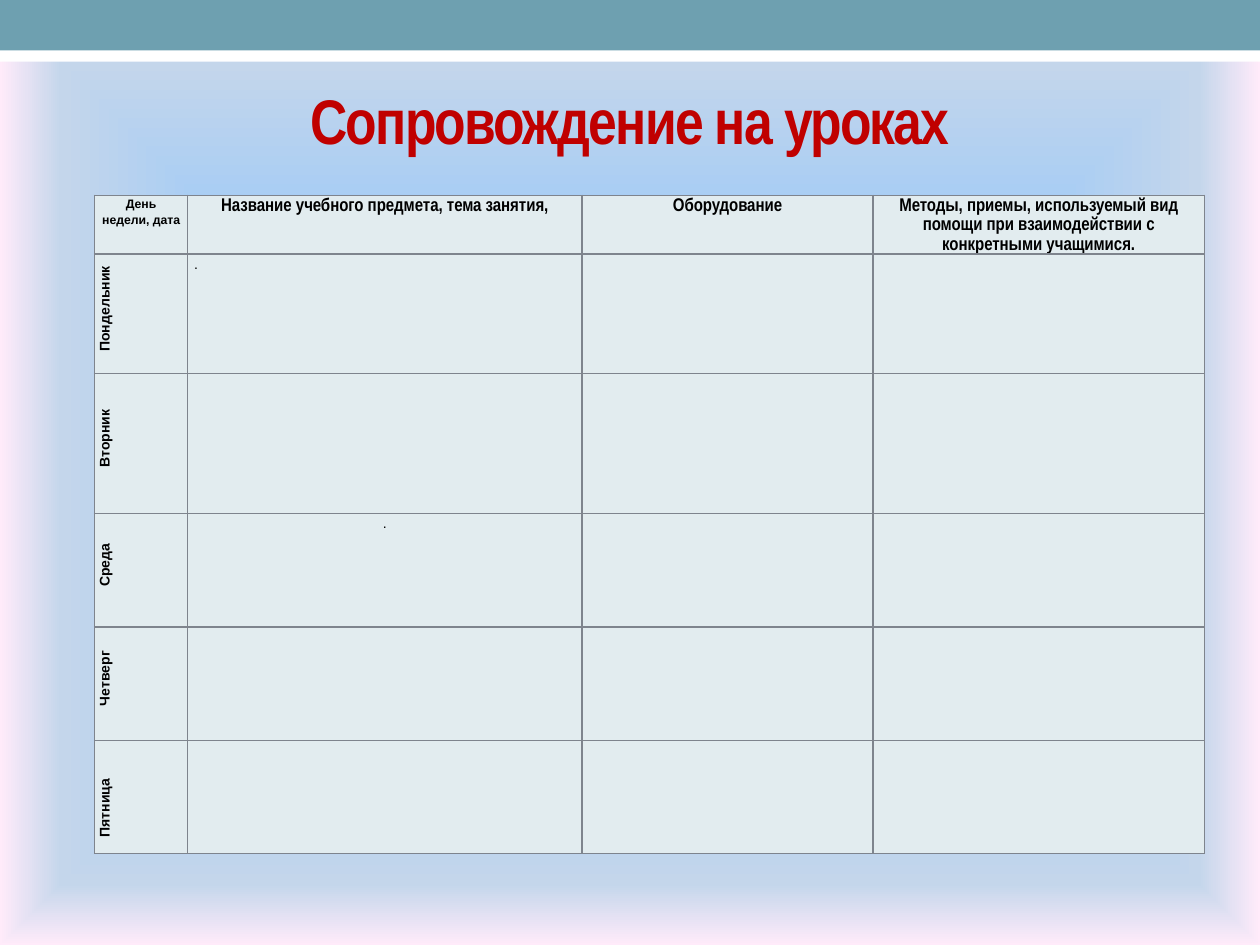
import pptx
import pptx.dml.color
import pptx.enum.shapes
import pptx.enum.text
import pptx.oxml
import pptx.oxml.ns
import pptx.util
from pptx.util import Inches

ALIGN = pptx.enum.text.PP_ALIGN
NS = pptx.oxml.ns.nsdecls("a", "p")
BACKGROUND_STOPS = [(0, "5E9EFF"), (23, "85C2FF"), (87, "C4D6EB"), (100, "FFEBFA")]
HEADERS = [
    "День недели, дата",
    "Название учебного предмета, тема занятия,",
    "Оборудование",
    "Методы, приемы, используемый вид помощи при взаимодействии с конкретными учащимися.",
]
DAYS = ["Пондельник", "Вторник", "Среда", "Четверг", "Пятница"]
COLUMN_WIDTHS = [0.74, 3.13, 2.31, 2.63]
ROW_HEIGHTS = [0.42, 0.95, 1.11, 0.9, 0.9, 0.9]


def color(hex_string):
    return pptx.dml.color.RGBColor.from_string(hex_string)


def write(frame, text, size=8, font="Arial", hue="000000", bold=True,
          align=ALIGN.CENTER, line_spacing=1.15, indent=0, tracking=0):
    paragraph = frame.paragraphs[0]
    paragraph.alignment = align
    paragraph.line_spacing = line_spacing
    if indent:
        paragraph._p.get_or_add_pPr().set("marL", str(Inches(indent)))
    run = paragraph.add_run()
    run.text = text
    run.font.size = pptx.util.Pt(size)
    run.font.name = font
    run.font.bold = bold
    run.font.color.rgb = color(hue)
    if tracking:
        run.font._element.set("spc", str(tracking * 100))


def add_background(slide):
    """Fill the slide with a gradient that spreads from its centre."""
    stops = "".join(
        f'<a:gs pos="{position * 1000}"><a:srgbClr val="{hue}"/></a:gs>'
        for position, hue in BACKGROUND_STOPS
    )
    background = pptx.oxml.parse_xml(
        f'<p:bg {NS}><p:bgPr><a:gradFill><a:gsLst>{stops}</a:gsLst>'
        '<a:path path="shape"><a:fillToRect l="50000" t="50000" r="50000" b="50000"/>'
        '</a:path></a:gradFill><a:effectLst/></p:bgPr></p:bg>'
    )
    slide.shapes._spTree.getparent().insert(0, background)


def add_top_band(slide, left, top, width, height):
    """Draw a teal band with a white strip showing below it."""
    for offset, depth, hue in [(0.24, height - 0.24, "FFFFFF"), (0, 0.4, "6EA0B0")]:
        band = slide.shapes.add_shape(
            pptx.enum.shapes.MSO_SHAPE.RECTANGLE,
            Inches(left), Inches(top + offset), Inches(width), Inches(depth))
        band.shadow.inherit = False
        band.fill.solid()
        band.fill.fore_color.rgb = color(hue)
        band.line.fill.background()


def add_title(slide, left, top, width, height):
    title = slide.shapes.title
    title.left, title.top = Inches(left), Inches(top)
    title.width, title.height = Inches(width), Inches(height)
    frame = title.text_frame
    frame.auto_size = pptx.enum.text.MSO_AUTO_SIZE.NONE
    frame.vertical_anchor = pptx.enum.text.MSO_ANCHOR.MIDDLE
    write(frame, "Сопровождение на уроках", size=36, font="Arial Narrow",
          hue="C00000", line_spacing=1.0, tracking=-1)


def style_cell(cell):
    cell.margin_left = cell.margin_right = Inches(0.05)
    cell.margin_top = cell.margin_bottom = 0
    cell.fill.solid()
    cell.fill.fore_color.rgb = color("E2ECEF")
    properties = cell._tc.get_or_add_tcPr()
    for index, side in enumerate("LRTB"):
        properties.insert(index, pptx.oxml.parse_xml(
            f'<a:ln{side} {NS} w="12700"><a:solidFill><a:srgbClr val="7E848D"/>'
            f'</a:solidFill></a:ln{side}>'))


def add_week_table(slide, left, top, width, height):
    table = slide.shapes.add_table(
        len(ROW_HEIGHTS), len(COLUMN_WIDTHS),
        Inches(left), Inches(top), Inches(width), Inches(height)).table
    table.first_row = table.horz_banding = False
    for column, column_width in zip(table.columns, COLUMN_WIDTHS):
        column.width = Inches(column_width)
    for row, row_height in zip(table.rows, ROW_HEIGHTS):
        row.height = Inches(row_height)
    for cell in table.iter_cells():
        style_cell(cell)

    for index, header in enumerate(HEADERS):
        size, font = (10.5, "Arial Narrow") if index else (7, "Arial")
        write(table.cell(0, index).text_frame, header, size=size, font=font)
    for index, day in enumerate(DAYS, start=1):
        day_cell = table.cell(index, 0)
        day_cell._tc.get_or_add_tcPr().set("vert", "vert270")
        align = ALIGN.LEFT if day == DAYS[-1] else ALIGN.CENTER
        write(day_cell.text_frame, day, align=align, indent=0.08)
    for day, align in [("Пондельник", ALIGN.LEFT), ("Среда", ALIGN.CENTER)]:
        lesson_cell = table.cell(DAYS.index(day) + 1, 1)
        write(lesson_cell.text_frame, ".", bold=False, align=align)


def main():
    presentation = pptx.Presentation()
    presentation.slide_width = Inches(10)
    presentation.slide_height = Inches(7.5)
    slide = presentation.slides.add_slide(presentation.slide_layouts[5])
    add_background(slide)
    add_top_band(slide, 0, 0, 10, 0.49)
    add_title(slide, 0.5, 0.58, 9, 0.73)
    add_week_table(slide, 0.75, 1.55, 8.82, 5.38)
    presentation.save("out.pptx")


if __name__ == "__main__":
    main()
